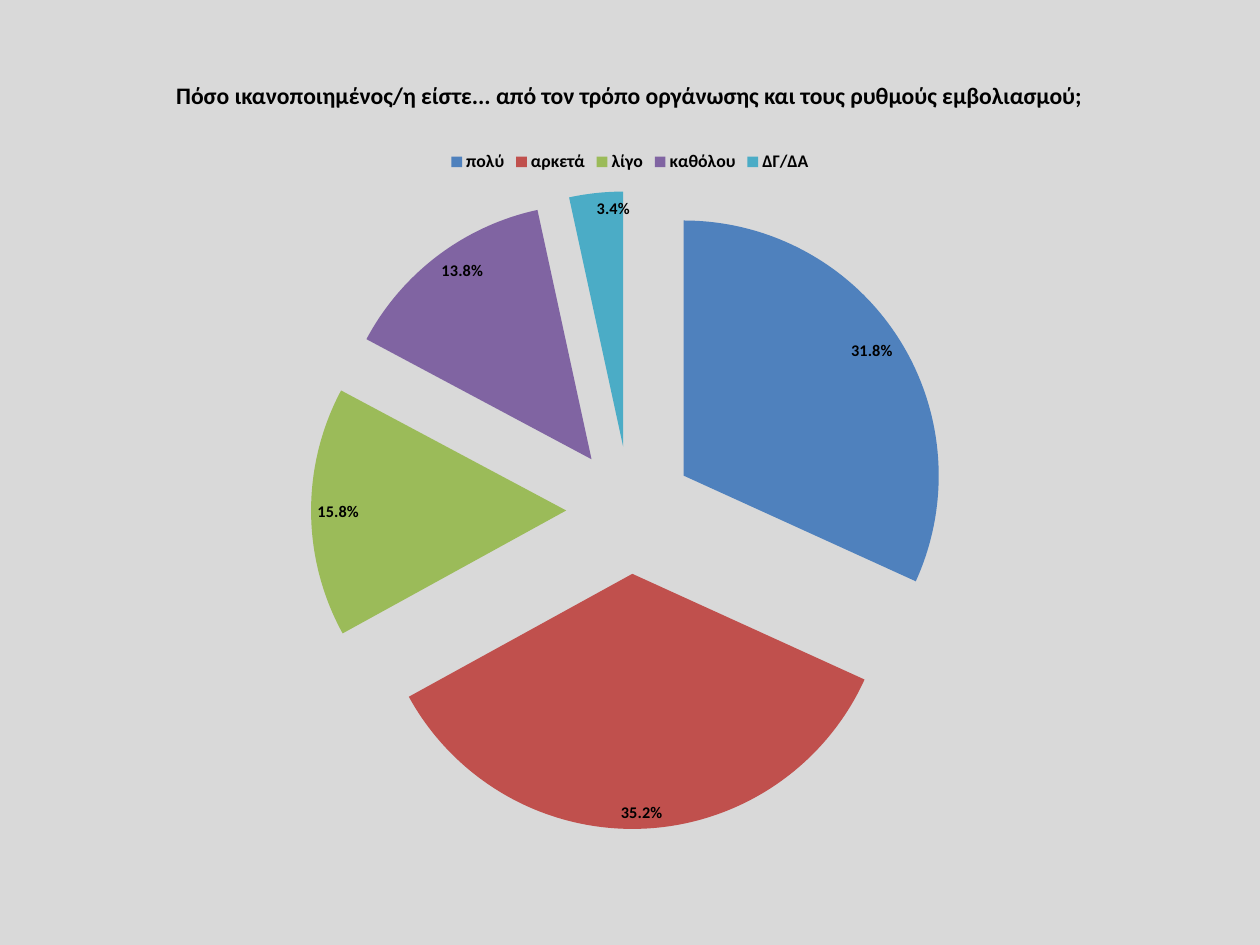
import pptx
import pptx.chart.data
import pptx.dml.color
import pptx.enum.chart
import pptx.enum.text
import pptx.util
from pptx.oxml import parse_xml
from pptx.oxml.ns import nsdecls

Pt = pptx.util.Pt
Place = pptx.enum.chart.XL_LEGEND_POSITION
Label = pptx.enum.chart.XL_LABEL_POSITION

# Content
TITLE = "Πόσο ικανοποιημένος/η είστε... από τον τρόπο οργάνωσης και τους ρυθμούς εμβολιασμού;"
SLICES = [
    ("πολύ", 31.8, "4F81BD"),
    ("αρκετά", 35.2, "C0504D"),
    ("λίγο", 15.8, "9BBB59"),
    ("καθόλου", 13.8, "8064A2"),
    ("ΔΓ/ΔΑ", 3.4, "4BACC6"),
]
BURST = 25  # gap of each slice from the centre, percent of radius


def paint(fill, color):
    fill.solid()
    fill.fore_color.rgb = pptx.dml.color.RGBColor.from_string(color)


def style(font, size, bold=True, color="000000"):
    font.name = "Calibri"
    font.size = Pt(size)
    font.bold = bold
    paint(font.fill, color)


def write(frame, text, size=16, align=pptx.enum.text.PP_ALIGN.CENTER):
    frame.text = text
    frame.word_wrap = True
    frame.vertical_anchor = pptx.enum.text.MSO_ANCHOR.MIDDLE
    frame.margin_left = frame.margin_right = Pt(8.5)
    frame.margin_top = frame.margin_bottom = Pt(4.25)
    line = frame.paragraphs[0]
    line.alignment = align
    style(line.runs[0].font, size)


def place(shape, left, top, width, height):
    shape.left, shape.top = Pt(left), Pt(top)
    shape.width, shape.height = Pt(width), Pt(height)


def main():
    # Slide
    deck = pptx.Presentation()
    deck.slide_width, deck.slide_height = Pt(852.5), Pt(639.4)
    slide = deck.slides.add_slide(deck.slide_layouts[5])
    paint(slide.background.fill, "D9D9D9")

    # Title
    title = slide.shapes.title
    place(title, 58.3, 33.8, 735, 60.5)
    write(title.text_frame, TITLE)

    # Pie chart
    names, shares, colors = zip(*SLICES)
    data = pptx.chart.data.CategoryChartData()
    data.categories = names
    data.add_series("Series 1", shares)
    chart = slide.shapes.add_chart(
        pptx.enum.chart.XL_CHART_TYPE.PIE,
        Pt(42.5), Pt(94.3), Pt(767.5), Pt(476.6), data).chart
    chart.has_title = False
    style(chart.font, 10, bold=False)

    # Legend
    chart.has_legend = True
    chart.legend.position = Place.TOP
    chart.legend.include_in_layout = False
    style(chart.legend.font, 12)

    # Percent labels
    plot = chart.plots[0]
    plot.vary_by_categories = True
    labels = plot.series[0].data_labels
    labels.show_percentage = True
    labels.show_value = False
    labels.number_format = "0.0%"
    labels.number_format_is_linked = False
    labels.position = Label.INSIDE_END
    style(labels.font, 11)

    # Slices, coloured and pulled apart
    series = plot.series[0]
    for i, color in enumerate(colors):
        paint(series.points[i].format.fill, color)
    for slot in series._element.findall(".//{*}dPt"):
        gap = f'<c:explosion {nsdecls("c")} val="{BURST}"/>'
        slot.find("{*}spPr").addprevious(parse_xml(gap))

    deck.save("out.pptx")


if __name__ == "__main__":
    main()
